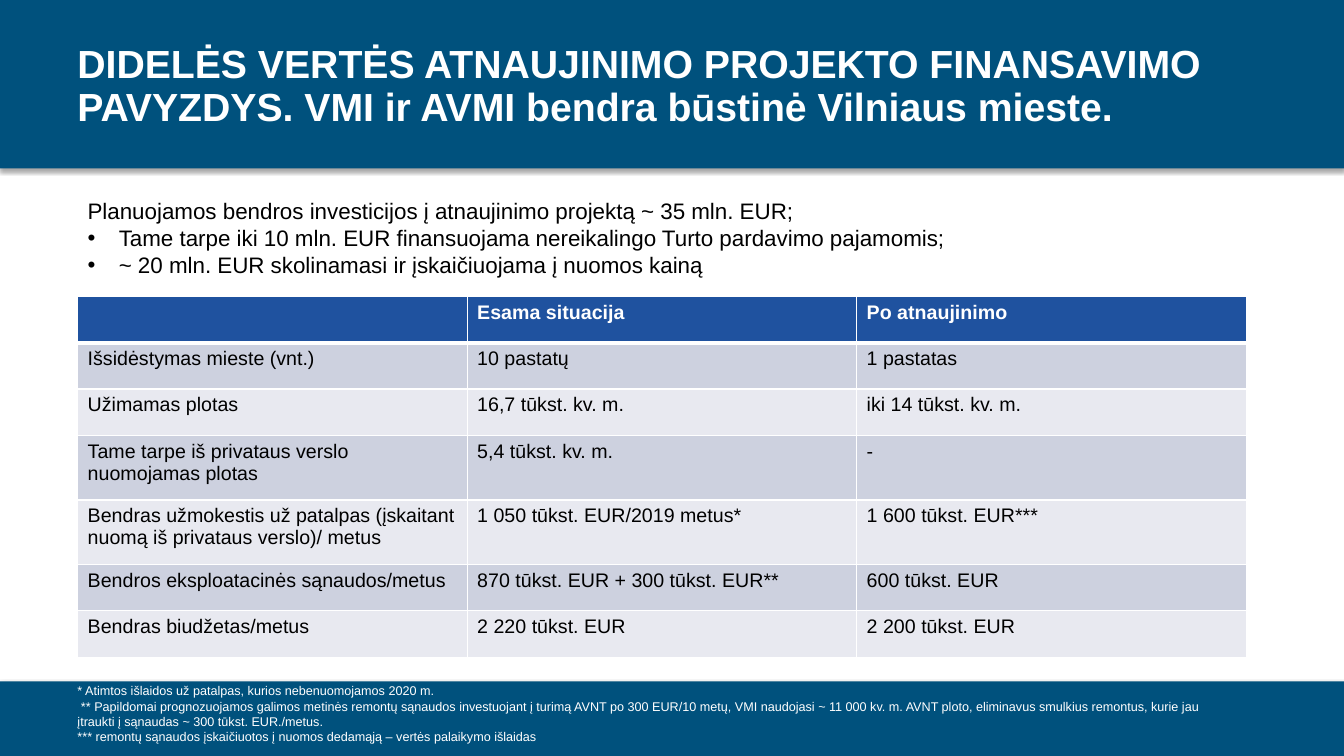
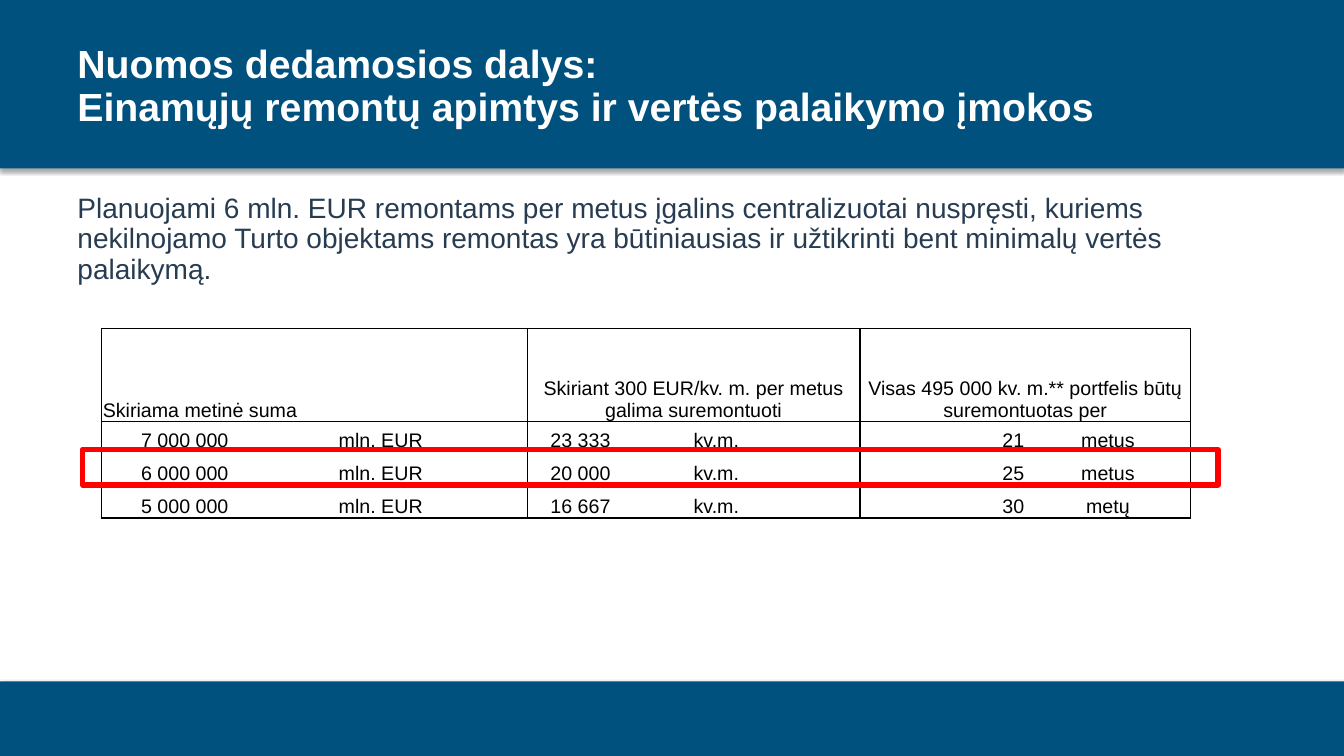
import pptx
import pptx.util
import pptx.dml.color
import pptx.enum.shapes
import pptx.enum.text
import pptx.oxml
import pptx.oxml.ns

WIDTH, HEIGHT = 13.33, 7.5
MARGIN = 0.67
TITLE_WIDTH = 11.94
TABLE_WIDTH = 11.59
FONT = "Arial"
BAND, WHITE, BLACK = "00517D", "FFFFFF", "000000"
SLATE, RED, HEADER = "273B51", "FF0000", "1F529F"
STRIPES = ["CDD1DF", "E8E9F0"]
BANDS = [(0, 1.67), (6.76, 0.74)]

ALIGN = pptx.enum.text.PP_ALIGN
ANCHOR = pptx.enum.text.MSO_ANCHOR
RECTANGLE = pptx.enum.shapes.MSO_SHAPE.RECTANGLE
inches = pptx.util.Inches
points = pptx.util.Pt

FINANCING = {
    "title": "DIDELĖS VERTĖS ATNAUJINIMO PROJEKTO FINANSAVIMO PAVYZDYS. "
             "VMI ir AVMI bendra būstinė Vilniaus mieste.",
    "lead": "Planuojamos bendros investicijos į atnaujinimo projektą ~ 35 mln. EUR;",
    "bullets": [
        "Tame tarpe iki 10 mln. EUR finansuojama nereikalingo Turto pardavimo pajamomis;",
        "~ 20 mln. EUR skolinamasi ir įskaičiuojama į nuomos kainą",
    ],
    "rows": [
        ("", "Esama situacija", "Po atnaujinimo"),
        ("Išsidėstymas mieste (vnt.)", "10 pastatų", "1 pastatas"),
        ("Užimamas plotas", "16,7 tūkst. kv. m.", "iki 14 tūkst. kv. m."),
        ("Tame tarpe iš privataus verslo nuomojamas plotas", "5,4 tūkst. kv. m.", "-"),
        ("Bendras užmokestis už patalpas (įskaitant nuomą iš privataus verslo)/ metus",
         "1 050 tūkst. EUR/2019 metus*", "1 600 tūkst. EUR***"),
        ("Bendros eksploatacinės sąnaudos/metus",
         "870 tūkst. EUR + 300 tūkst. EUR**", "600 tūkst. EUR"),
        ("Bendras biudžetas/metus", "2 220 tūkst. EUR", "2 200 tūkst. EUR"),
    ],
    "heights": [0.46, 0.46, 0.46, 0.64, 0.64, 0.46, 0.46],
    "notes": [
        "* Atimtos išlaidos už patalpas, kurios nebenuomojamos 2020 m.",
        " ** Papildomai prognozuojamos galimos metinės remontų sąnaudos investuojant "
        "į turimą AVNT po 300 EUR/10 metų, VMI naudojasi ~ 11 000 kv. m. AVNT ploto, "
        "eliminavus smulkius remontus, kurie jau įtraukti į sąnaudas ~ 300 tūkst. EUR./metus.",
        "*** remontų sąnaudos įskaičiuotos į nuomos dedamąją – vertės palaikymo išlaidas",
    ],
}

REPAIRS = {
    "title": "Nuomos dedamosios dalys:\nEinamųjų remontų apimtys ir vertės palaikymo įmokos",
    "lead": "Planuojami 6 mln. EUR remontams per metus įgalins centralizuotai nuspręsti, "
            "kuriems nekilnojamo Turto objektams remontas yra būtiniausias ir užtikrinti "
            "bent minimalų vertės palaikymą.",
    "headings": [
        ("Skiriama metinė suma", ALIGN.LEFT),
        ("Skiriant 300 EUR/kv. m. per metus galima suremontuoti", ALIGN.CENTER),
        ("Visas 495 000 kv. m.** portfelis būtų suremontuotas per", ALIGN.CENTER),
    ],
    "rows": [
        ("7 000 000", "mln. EUR", "23 333", "kv.m.", "21", "metus"),
        ("6 000 000", "mln. EUR", "20 000", "kv.m.", "25", "metus"),
        ("5 000 000", "mln. EUR", "16 667", "kv.m.", "30", "metų"),
    ],
    "columns": [
        (2.34, ALIGN.LEFT, 0.39), (1.88, ALIGN.LEFT, 0.01),
        (1.64, ALIGN.LEFT, 0.23), (1.66, ALIGN.LEFT, 0.01),
        (1.64, ALIGN.RIGHT, 0.01), (1.64, ALIGN.CENTER, 0.01),
    ],
    "heights": [0.92, 0.3, 0.33, 0.33],
}


def color(value):
    return pptx.dml.color.RGBColor.from_string(value)


def xml(tag, attributes="", content=""):
    namespace = pptx.oxml.ns.nsdecls("a")
    return pptx.oxml.parse_xml(f"<a:{tag} {namespace} {attributes}>{content}</a:{tag}>")


def write_text(frame, text, size=14, ink=BLACK, bold=False, align=ALIGN.LEFT,
               spacing=None, before=0, indent=0, bullet=False, append=False):
    paragraph = frame.add_paragraph() if append else frame.paragraphs[0]
    paragraph.text = text.replace("\n", "\v")
    paragraph.alignment = align
    paragraph.space_before = points(before)
    if spacing:
        paragraph.line_spacing = spacing
    for font in [paragraph.font] + [run.font for run in paragraph.runs]:
        font.name, font.size, font.bold = FONT, points(size), bold
        font.color.rgb = color(ink)
    properties = paragraph._p.get_or_add_pPr()
    if indent:
        properties.set("marL", str(inches(indent)))
    if bullet:
        properties.set("indent", str(-inches(indent)))
        mark = xml("buChar", 'char="•"')
        defaults = properties.find(pptx.oxml.ns.qn("a:defRPr"))
        defaults.addprevious(xml("buFont", f'typeface="{FONT}"'))
        defaults.addprevious(mark)


def add_text_box(slide, left, top, width, height, inset=0.05, anchor=ANCHOR.TOP):
    frame = slide.shapes.add_textbox(*map(inches, (left, top, width, height))).text_frame
    frame.word_wrap = True
    frame.vertical_anchor = anchor
    frame.margin_left = frame.margin_right = inches(0.1)
    frame.margin_top = frame.margin_bottom = inches(inset)
    return frame


def add_rectangle(slide, left, top, width, height):
    shape = slide.shapes.add_shape(RECTANGLE, *map(inches, (left, top, width, height)))
    shape.shadow.inherit = False
    return shape


def add_bands(slide):
    for top, height in BANDS:
        band = add_rectangle(slide, 0, top, WIDTH, height)
        band.fill.solid()
        band.fill.fore_color.rgb = color(BAND)
        band.line.fill.background()
        effects = band._element.spPr.find(pptx.oxml.ns.qn("a:effectLst"))
        effects.append(xml(
            "outerShdw",
            f'blurRad="{points(3.1)}" dist="{points(1.8)}" dir="5400000" rotWithShape="0"',
            f'<a:srgbClr val="{BLACK}"><a:alpha val="35000"/></a:srgbClr>'))


def add_title(slide, text):
    frame = add_text_box(slide, MARGIN, 0.37, TITLE_WIDTH, 0.99, 0.1, ANCHOR.MIDDLE)
    write_text(frame, text, size=28, ink=WHITE, bold=True, spacing=0.9)


def add_grid(slide, left, top, widths, heights):
    table = slide.shapes.add_table(
        len(heights), len(widths),
        *map(inches, (left, top, sum(widths), sum(heights)))).table
    for column, width in zip(table.columns, widths):
        column.width = inches(width)
    for row, height in zip(table.rows, heights):
        row.height = inches(height)
    return table


def set_borders(cell, ink, widths):
    properties = cell._tc.get_or_add_tcPr()
    for position, side in enumerate("LRTB"):
        width = widths.get(side, 0)
        paint = f'<a:solidFill><a:srgbClr val="{ink}"/></a:solidFill>' if width else "<a:noFill/>"
        properties.insert(position, xml(f"ln{side}", f'w="{points(width)}"', paint))


def add_financing_table(slide):
    rows = FINANCING["rows"]
    count = len(rows[0])
    table = add_grid(slide, MARGIN + 0.1, 2.94, [TABLE_WIDTH / count] * count,
                     FINANCING["heights"])
    for row, texts in enumerate(rows):
        heading = row == 0
        for column, text in enumerate(texts):
            cell = table.cell(row, column)
            cell.fill.solid()
            cell.fill.fore_color.rgb = color(HEADER if heading else STRIPES[(row - 1) % 2])
            write_text(cell.text_frame, text, ink=WHITE if heading else BLACK, bold=heading)
            set_borders(cell, WHITE, {"L": 1, "R": 1, "T": 3 if row == 1 else 1,
                                      "B": 3 if heading else 1})


def add_repairs_table(slide):
    columns = REPAIRS["columns"]
    table = add_grid(slide, 1.01, 3.26, [column[0] for column in columns], REPAIRS["heights"])
    for row in range(len(REPAIRS["heights"])):
        for column, (_, align, indent) in enumerate(columns):
            cell = table.cell(row, column)
            cell.fill.background()
            cell.vertical_anchor = ANCHOR.BOTTOM
            cell.margin_left = inches(indent if row else 0.01)
            cell.margin_right = cell.margin_top = inches(0.01)
            cell.margin_bottom = 0
            sides = "LRTB" if row == 0 else ("LTB", "RTB")[column % 2]
            set_borders(cell, BLACK, dict.fromkeys(sides, 1))
            if row:
                write_text(cell.text_frame, REPAIRS["rows"][row - 1][column], align=align)
    for pair, (text, align) in enumerate(REPAIRS["headings"]):
        cell = table.cell(0, 2 * pair)
        cell.merge(table.cell(0, 2 * pair + 1))
        write_text(cell.text_frame, text, align=align)


def add_highlight(slide):
    frame = add_rectangle(slide, 0.82, 4.46, 11.26, 0.35)
    frame.fill.background()
    frame.line.color.rgb = color(RED)
    frame.line.width = points(4)
    frame._element.spPr.find(pptx.oxml.ns.qn("a:ln")).append(xml("round"))


def fill_financing(slide):
    notes = add_text_box(slide, MARGIN, 6.73, TABLE_WIDTH, 0.71)
    for index, note in enumerate(FINANCING["notes"]):
        write_text(notes, note, size=9, ink=WHITE, append=index > 0)
    summary = add_text_box(slide, 0.77, 1.91, 11.8, 0.91)
    write_text(summary, FINANCING["lead"], size=16)
    for text in FINANCING["bullets"]:
        write_text(summary, text, size=16, indent=0.31, bullet=True, append=True)
    add_financing_table(slide)


def fill_repairs(slide):
    body = add_text_box(slide, 0.48, 1.83, TITLE_WIDTH, 4.74, 0.1)
    write_text(body, REPAIRS["lead"], size=20, ink=SLATE, spacing=0.9, before=10, indent=0.19)
    add_repairs_table(slide)
    add_highlight(slide)


def main():
    presentation = pptx.Presentation()
    presentation.slide_width, presentation.slide_height = inches(WIDTH), inches(HEIGHT)
    for content, fill_slide in [(FINANCING, fill_financing), (REPAIRS, fill_repairs)]:
        slide = presentation.slides.add_slide(presentation.slide_layouts[6])
        add_bands(slide)
        add_title(slide, content["title"])
        fill_slide(slide)
    presentation.save("out.pptx")


if __name__ == "__main__":
    main()
